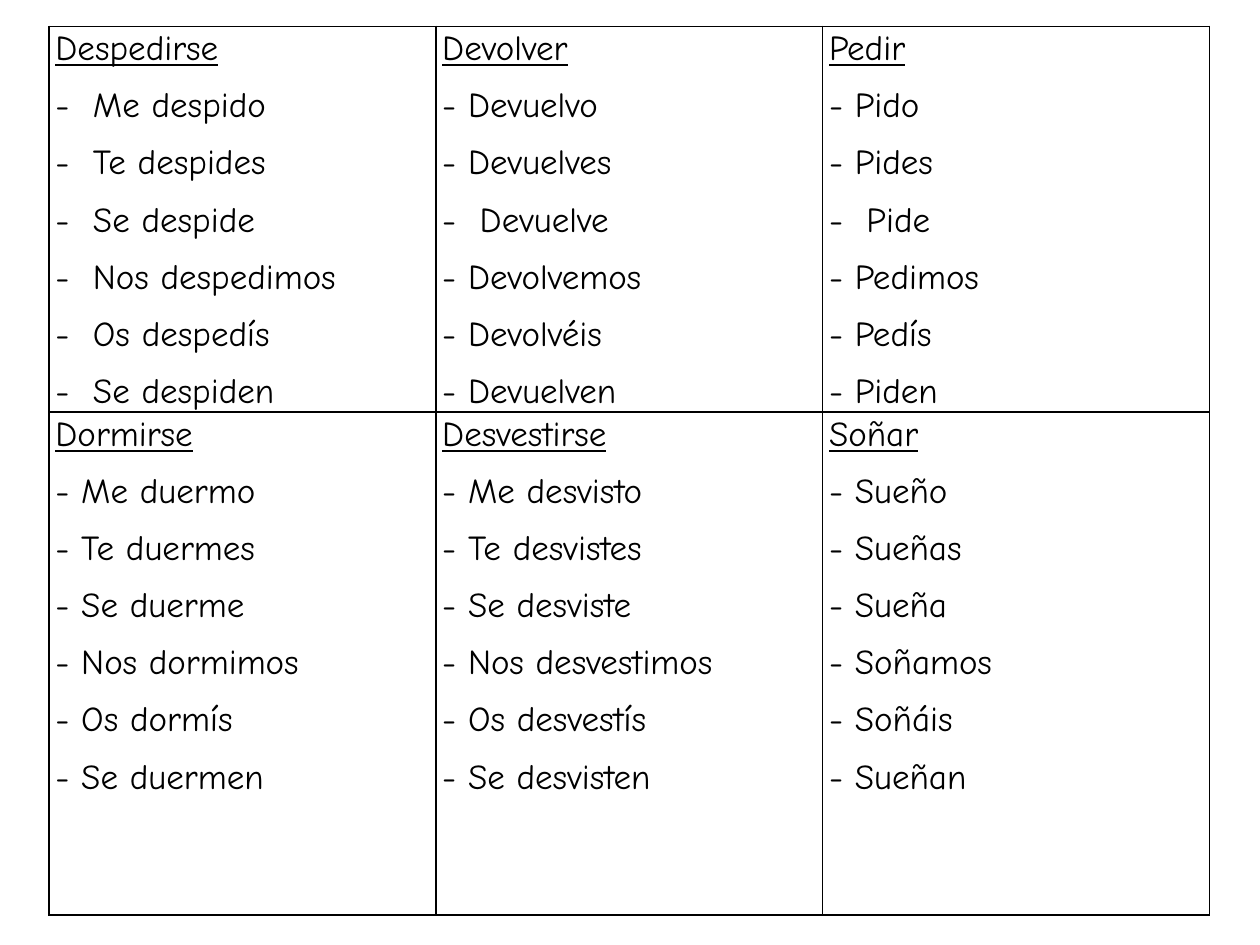
from dataclasses import dataclass

from lxml.etree import SubElement
from pptx import Presentation
from pptx.dml.color import RGBColor
from pptx.oxml.ns import qn
from pptx.table import _Cell as Cell
from pptx.util import Inches, Pt


@dataclass(frozen=True)
class Theme:
    font: str = "Comic Neue"
    size: float = 20
    ink: str = "000000"
    border: float = 1


@dataclass(frozen=True)
class Verb:
    """A verb and its present-tense forms; wide lists the forms set further from the dash."""
    name: str
    forms: tuple[str, ...]
    wide: tuple[int, ...] = ()

    def lines(self) -> list[str]:
        return [f"-{'  ' if i in self.wide else ' '}{form}"
                for i, form in enumerate(self.forms)]


THEME = Theme()
COL_WIDTH = 3.07
ROW_HEIGHTS = (2.78, 3.99)
CELL_FORMAT = {"margin_left": Inches(0.05), "margin_right": Inches(0.05),
               "margin_top": 0, "margin_bottom": 0}
PARAGRAPH_FORMAT = {"line_spacing": 1.07, "space_after": Pt(8)}

VERBS = (
    (
        Verb("Despedirse", ("Me despido", "Te despides", "Se despide",
                            "Nos despedimos", "Os despedís", "Se despiden"),
             wide=tuple(range(6))),
        Verb("Devolver", ("Devuelvo", "Devuelves", "Devuelve",
                          "Devolvemos", "Devolvéis", "Devuelven"), wide=(2,)),
        Verb("Pedir", ("Pido", "Pides", "Pide", "Pedimos", "Pedís", "Piden"),
             wide=(2,)),
    ),
    (
        Verb("Dormirse", ("Me duermo", "Te duermes", "Se duerme",
                          "Nos dormimos", "Os dormís", "Se duermen")),
        Verb("Desvestirse", ("Me desvisto", "Te desvistes", "Se desviste",
                             "Nos desvestimos", "Os desvestís", "Se desvisten")),
        Verb("Soñar", ("Sueño", "Sueñas", "Sueña", "Soñamos", "Soñáis", "Sueñan")),
    ),
)


def set_format(target: object, values: dict) -> None:
    for name, value in values.items():
        setattr(target, name, value)


def add_borders(cell: Cell) -> None:
    tc_pr = cell._tc.get_or_add_tcPr()
    for i, side in enumerate(("lnL", "lnR", "lnT", "lnB")):
        ln = tc_pr.makeelement(qn(f"a:{side}"), {"w": str(Pt(THEME.border))})
        fill = SubElement(ln, qn("a:solidFill"))
        SubElement(fill, qn("a:srgbClr"), val=THEME.ink)
        tc_pr.insert(i, ln)  # borders come before the cell fill


def fill_cell(cell: Cell, verb: Verb) -> None:
    set_format(cell, CELL_FORMAT)
    cell.fill.background()
    add_borders(cell)
    tf = cell.text_frame
    for i, line in enumerate([verb.name, *verb.lines()]):
        p = tf.add_paragraph() if i else tf.paragraphs[0]
        set_format(p, PARAGRAPH_FORMAT)
        r = p.add_run()
        r.text = line
        set_format(r.font, {"name": THEME.font, "size": Pt(THEME.size),
                            "bold": False, "underline": i == 0})
        r.font.color.rgb = RGBColor.from_string(THEME.ink)


def main() -> None:
    prs = Presentation()
    set_format(prs, {"slide_width": Inches(10), "slide_height": Inches(7.5)})
    s = prs.slides.add_slide(prs.slide_layouts[6])
    n_rows, n_cols = len(VERBS), len(VERBS[0])
    table = s.shapes.add_table(n_rows, n_cols, Inches(0.39), Inches(0.21),
                               Inches(COL_WIDTH * n_cols),
                               Inches(sum(ROW_HEIGHTS))).table
    set_format(table, {"first_row": False, "horz_banding": False})
    for col in table.columns:
        col.width = Inches(COL_WIDTH)
    for row, height, verbs in zip(table.rows, ROW_HEIGHTS, VERBS):
        row.height = Inches(height)
        for cell, verb in zip(row.cells, verbs):
            fill_cell(cell, verb)
    prs.save("out.pptx")


if __name__ == "__main__":
    main()
